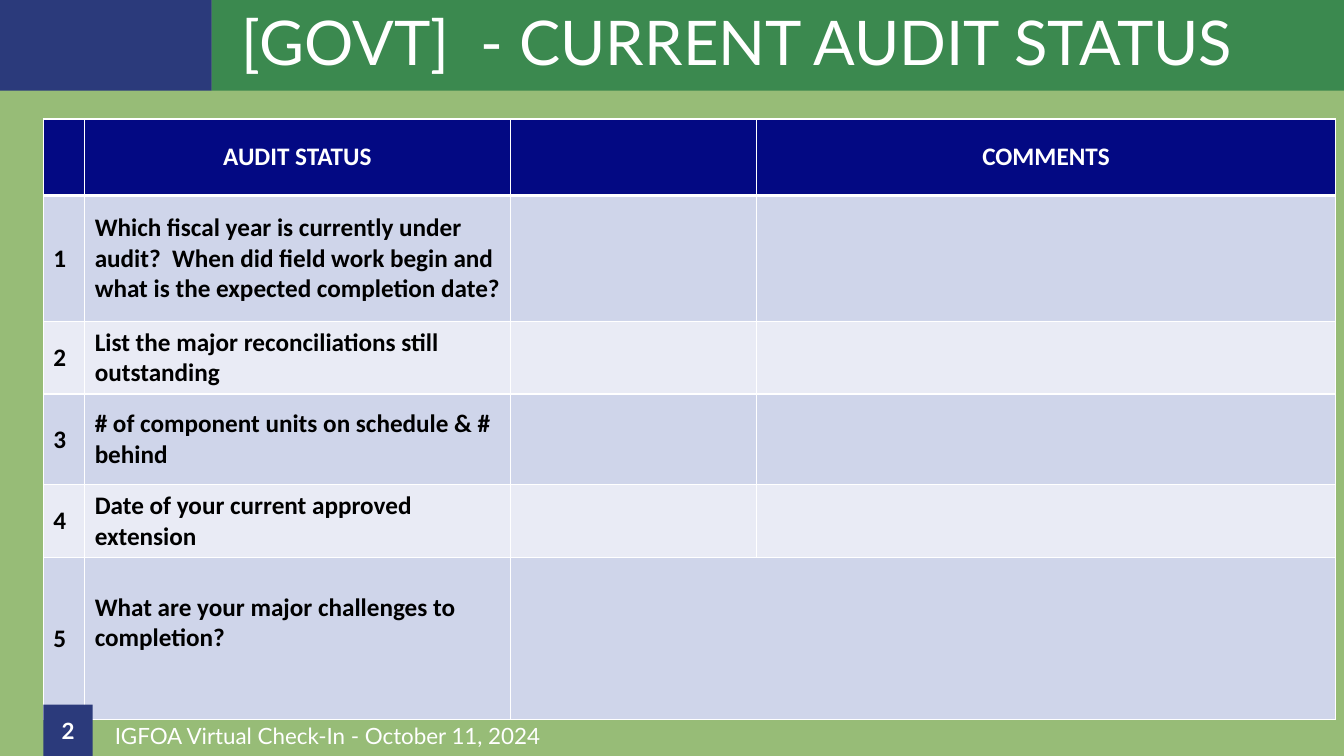
from lxml import etree
from pptx import Presentation
from pptx import oxml
from pptx import util as u
from pptx.dml.color import RGBColor
from pptx.enum import shapes, text
from pptx.oxml import ns

NAVY, GREEN, BACKGROUND, WHITE, BLACK = "2B3A7B", "3B894F", "97BC77", "FFFFFF", "000000"
HEADER, BANDS = "030983", ("CFD5EA", "E9EBF5")
COLUMN_WIDTHS = (0.41, 4.22, 2.44, 5.75)
ROW_HEIGHTS = (0.76, 1.25, 0.72, 0.9, 0.72, 1.61)
QUESTIONS = (
    "Which fiscal year is currently under audit?  When did field work begin and "
    "what is the expected completion date?",
    "List the major reconciliations still outstanding",
    "# of component units on schedule & # behind",
    "Date of your current approved extension",
    "What are your major challenges to completion?",
)


def rgb(color):
    return RGBColor.from_string(color)


def paint(fill, color):
    fill.solid()
    fill.fore_color.rgb = rgb(color)


def set_borders(cell, top=1, bottom=1):
    """Draw white cell borders; widths are in points."""
    properties = cell._tc.get_or_add_tcPr()
    widths = {"L": 1, "R": 1, "T": top, "B": bottom}
    for index, (side, width) in enumerate(widths.items()):
        line = etree.Element(ns.qn(f"a:ln{side}"), w=str(u.Pt(width)))
        line.append(oxml.parse_xml(
            f'<a:solidFill {ns.nsdecls("a")}><a:srgbClr val="{WHITE}"/></a:solidFill>'))
        properties.insert(index, line)


class SlideBuilder:
    heading_font = "Lato"
    table_font = "Calibri"

    def __init__(self, slide):
        self.slide = slide
        paint(slide.background.fill, BACKGROUND)

    def set_text(self, frame, words, size, font, color=WHITE, bold=False,
                 align=text.PP_ALIGN.LEFT):
        frame.word_wrap = True
        paragraph = frame.paragraphs[0]
        paragraph.text = words
        paragraph.alignment = align
        paragraph.font.size = u.Pt(size)
        paragraph.font.name = font
        paragraph.font.bold = bold
        paragraph.font.color.rgb = rgb(color)
        return paragraph

    def title(self, words, *box):
        shape = self.slide.shapes.title
        shape.left, shape.top, shape.width, shape.height = map(u.Inches, box)
        paint(shape.fill, GREEN)
        frame = shape.text_frame
        frame.auto_size = text.MSO_AUTO_SIZE.NONE
        frame.vertical_anchor = text.MSO_ANCHOR.MIDDLE
        frame.margin_left = u.Inches(0.3)
        self.set_text(frame, words, 44, self.heading_font).line_spacing = 0.9

    def rectangle(self, *box, words=""):
        shape = self.slide.shapes.add_shape(
            shapes.MSO_SHAPE.RECTANGLE, *map(u.Inches, box))
        shape.shadow.inherit = False
        paint(shape.fill, NAVY)
        shape.line.fill.background()
        if words:
            shape.text_frame.vertical_anchor = text.MSO_ANCHOR.MIDDLE
            self.set_text(shape.text_frame, words, 16, self.heading_font, bold=True,
                          align=text.PP_ALIGN.CENTER)

    def label(self, words, *box):
        shape = self.slide.shapes.add_textbox(*map(u.Inches, box))
        shape.text_frame.vertical_anchor = text.MSO_ANCHOR.MIDDLE
        self.set_text(shape.text_frame, words, 16, self.heading_font)

    def table(self, rows, left, top):
        table = self.slide.shapes.add_table(
            len(rows), len(COLUMN_WIDTHS), u.Inches(left), u.Inches(top),
            u.Inches(sum(COLUMN_WIDTHS)), u.Inches(sum(ROW_HEIGHTS))).table
        for column, width in zip(table.columns, COLUMN_WIDTHS):
            column.width = u.Inches(width)
        for row, height in zip(table.rows, ROW_HEIGHTS):
            row.height = u.Inches(height)
        for row_index, row in enumerate(rows):
            header = row_index == 0
            for column_index, words in enumerate(row):
                cell = table.cell(row_index, column_index)
                paint(cell.fill, HEADER if header else BANDS[(row_index - 1) % 2])
                set_borders(cell, top=3 if row_index == 1 else 1,
                            bottom=3 if header else 1)
                cell.vertical_anchor = text.MSO_ANCHOR.MIDDLE
                if words:
                    self.set_text(cell.text_frame, words, 18, self.table_font,
                                  WHITE if header else BLACK, True,
                                  text.PP_ALIGN.CENTER if header else text.PP_ALIGN.LEFT)
        return table


def main():
    presentation = Presentation()
    presentation.slide_width = u.Inches(13.33)
    presentation.slide_height = u.Inches(7.5)
    builder = SlideBuilder(presentation.slides.add_slide(presentation.slide_layouts[5]))

    builder.rectangle(0, 0, 2.1, 0.9)
    builder.label("IGFOA Virtual Check-In - October 11, 2024", 1.04, 7.1, 5.43, 0.4)
    builder.title("[GOVT]  - CURRENT AUDIT STATUS", 2.1, 0, 11.23, 0.9)

    rows = [("", "AUDIT STATUS", "", "COMMENTS")]
    rows += [(str(number), question, "", "")
             for number, question in enumerate(QUESTIONS, start=1)]
    table = builder.table(rows, 0.43, 1.18)
    last = len(rows) - 1
    table.cell(last, 2).merge(table.cell(last, 3))
    table.cell(last, 1).margin_bottom = u.Inches(0.36)

    builder.rectangle(0.43, 6.99, 0.49, 0.51, words="2")
    presentation.save("out.pptx")


if __name__ == "__main__":
    main()
